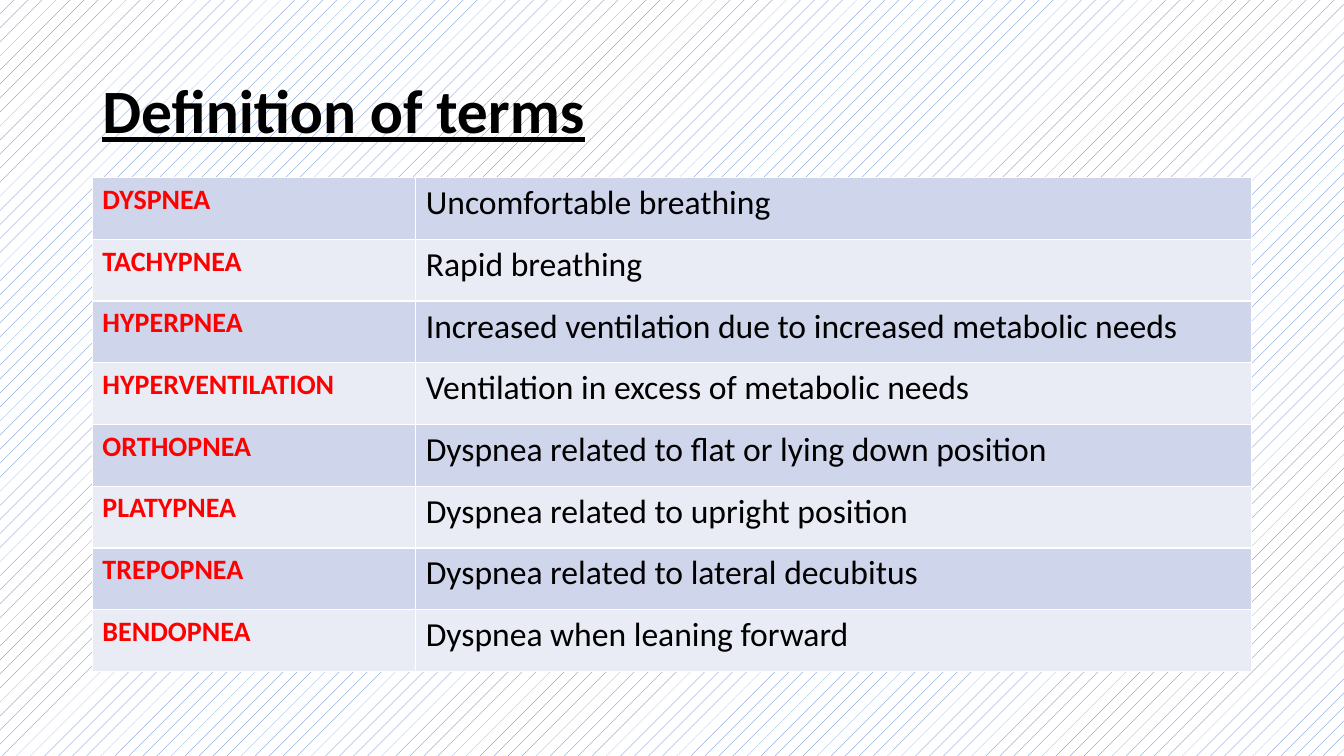
from lxml import etree
from pptx import Presentation
from pptx.dml.color import RGBColor
from pptx.enum.dml import MSO_PATTERN
from pptx.enum.text import MSO_ANCHOR
from pptx.oxml.ns import qn
from pptx.util import Pt

MIDDLE = MSO_ANCHOR.MIDDLE
DOTTED = MSO_PATTERN.PERCENT_5

COLORS = {
    "accent": "4472C4",
    "white": "FFFFFF",
    "text": "000000",
    "term": "FF0000",
    "odd_row": "CFD5EA",
    "even_row": "E9EBF5",
}

DEFINITIONS = [
    ("DYSPNEA", "Uncomfortable breathing"),
    ("TACHYPNEA", "Rapid breathing"),
    ("HYPERPNEA", "Increased ventilation due to increased metabolic needs"),
    ("HYPERVENTILATION", "Ventilation in excess of metabolic needs"),
    ("ORTHOPNEA", "Dyspnea related to flat or lying down position"),
    ("PLATYPNEA", "Dyspnea related to upright position"),
    ("TREPOPNEA", "Dyspnea related to lateral decubitus"),
    ("BENDOPNEA", "Dyspnea when leaning forward"),
]


class SlideBuilder:
    """Holds the style and the current slide."""

    font_name = "Calibri"

    def __init__(self, slide):
        self.slide = slide

    def color(self, name):
        return RGBColor.from_string(COLORS[name])

    def background(self, pattern, front, back):
        fill = self.slide.background.fill
        fill.patterned()
        fill.pattern = pattern
        fill.fore_color.rgb = self.color(front)
        fill.back_color.rgb = self.color(back)

    def set_text(self, frame, text, size, color, bold=False, underline=False):
        para = frame.paragraphs[0]
        para.text = text
        font = para.font
        font.name = self.font_name
        font.size = Pt(size)
        font.bold = bold
        font.underline = underline
        font.color.rgb = self.color(color)
        return para

    def title(self, text, left, top, width, height):
        box = self.slide.shapes.add_textbox(Pt(left), Pt(top), Pt(width), Pt(height))
        frame = box.text_frame
        frame.word_wrap = True
        frame.vertical_anchor = MIDDLE
        para = self.set_text(frame, text, 44, "text", bold=True, underline=True)
        para.line_spacing = 0.9

    def border(self, cell, color, width):
        properties = cell._tc.get_or_add_tcPr()
        for index, side in enumerate(("a:lnL", "a:lnR", "a:lnT", "a:lnB")):
            line = etree.Element(qn(side), w=str(Pt(width)))
            solid = etree.SubElement(line, qn("a:solidFill"))
            etree.SubElement(solid, qn("a:srgbClr"), val=COLORS[color])
            properties.insert(index, line)

    def table(self, rows, left, top, column_widths, row_height):
        table = self.slide.shapes.add_table(
            len(rows), len(column_widths), Pt(left), Pt(top),
            Pt(sum(column_widths)), Pt(row_height * len(rows)),
        ).table
        table.first_row = False
        for column, width in zip(table.columns, column_widths):
            column.width = Pt(width)
        for index, (row, (term, meaning)) in enumerate(zip(table.rows, rows)):
            row.height = Pt(row_height)
            term_cell, meaning_cell = row.cells
            self.set_text(term_cell.text_frame, term, 20, "term", bold=True)
            self.set_text(meaning_cell.text_frame, meaning, 24, "text")
            for cell in row.cells:
                cell.fill.solid()
                cell.fill.fore_color.rgb = self.color("even_row" if index % 2 else "odd_row")
                self.border(cell, "white", 1)


def main():
    deck = Presentation()
    deck.slide_width, deck.slide_height = Pt(960), Pt(540)
    page = SlideBuilder(deck.slides.add_slide(deck.slide_layouts[6]))

    # Patterned background
    page.background(DOTTED, "accent", "white")

    # Heading
    page.title("Definition of terms", 66, 28.75, 828, 104.4)

    # Terms and their meanings
    page.table(DEFINITIONS, 66, 126.9, (231, 597), 44.1)

    deck.save("out.pptx")


if __name__ == "__main__":
    main()
